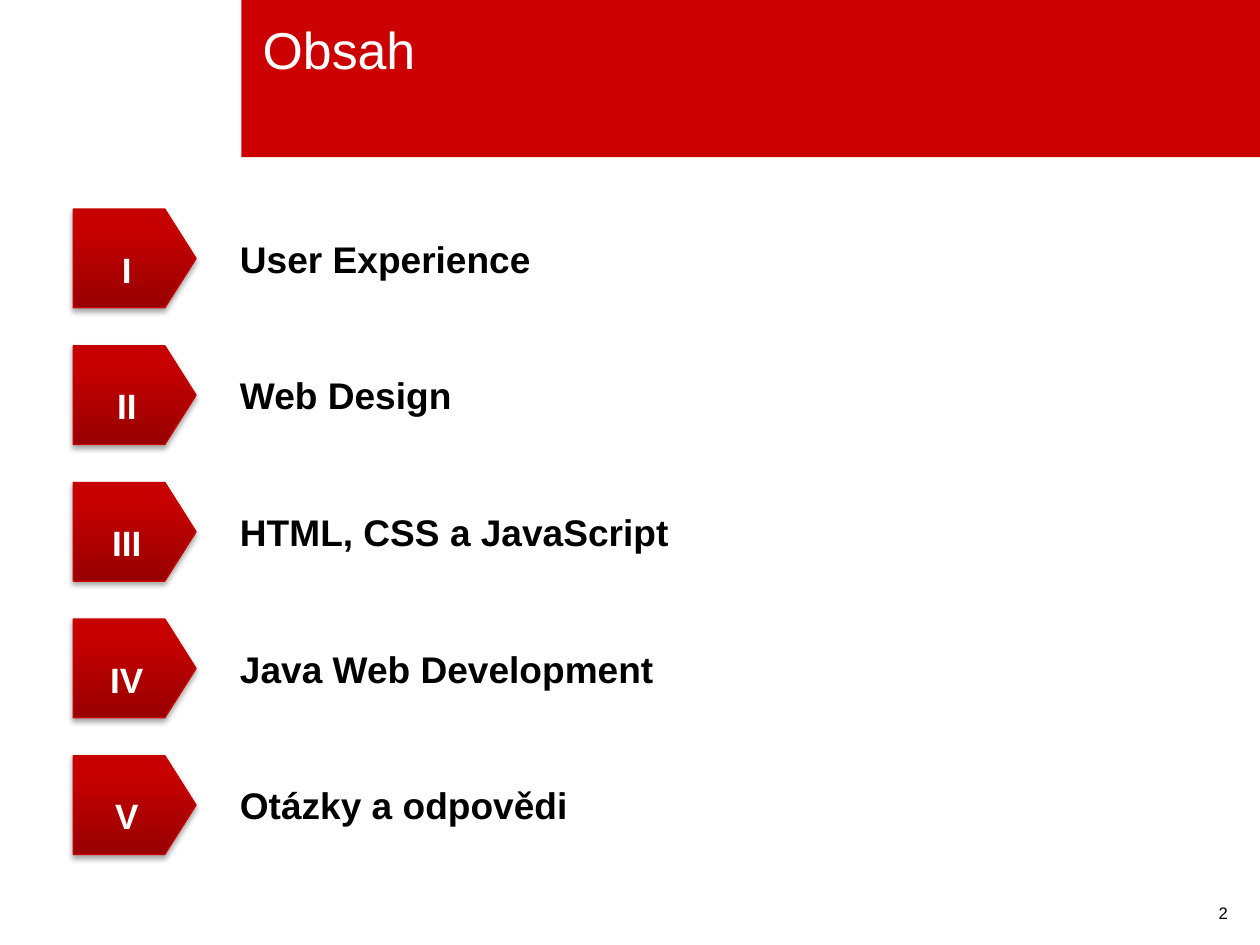
import dataclasses
import typing

import lxml.etree
import pptx
import pptx.dml.color
import pptx.enum.shapes
import pptx.enum.text
import pptx.oxml
import pptx.oxml.ns
import pptx.util

SHAPE = pptx.enum.shapes.MSO_SHAPE
ALIGN = pptx.enum.text.PP_ALIGN
ANCHOR = pptx.enum.text.MSO_ANCHOR
NS = 'xmlns:a="http://schemas.openxmlformats.org/drawingml/2006/main"'
WIDTH, HEIGHT = pptx.util.Inches(9.45), pptx.util.Inches(7.09)
RED, WHITE, BLACK = "CC0000", "FFFFFF", "000000"
STOPS = ((0, "980000"), (80, "C60000"), (100, "C70000"))
FIRST, PITCH, TALL = 22.14, 14.46, 10.44


@dataclasses.dataclass
class Box:
    """A frame in percent of the slide's width and height."""
    left: float
    top: float
    width: float
    height: float

    def frame(self) -> tuple[int, ...]:
        return (round(self.left * WIDTH / 100), round(self.top * HEIGHT / 100),
                round(self.width * WIDTH / 100), round(self.height * HEIGHT / 100))


@dataclasses.dataclass
class Topic:
    number: str
    title: str


TOPICS = (
    Topic("I", "User Experience"),
    Topic("II", "Web Design"),
    Topic("III", "HTML, CSS a JavaScript"),
    Topic("IV", "Java Web Development"),
    Topic("V", "Otázky a odpovědi"),
)


def color(code: str) -> pptx.dml.color.RGBColor:
    return pptx.dml.color.RGBColor.from_string(code)


def apply(target: typing.Any, values: dict[str, typing.Any]) -> None:
    for name, value in values.items():
        setattr(target, name, value)


def write(shape: typing.Any, text: str, size: float, ink: str,
          bold: bool = False, align: ALIGN = ALIGN.LEFT, space: float = 1.0,
          anchor: ANCHOR = ANCHOR.TOP, left: float = 0) -> None:
    frame = shape.text_frame
    frame.text = text
    apply(frame, {
        "word_wrap": True, "vertical_anchor": anchor,
        "auto_size": pptx.enum.text.MSO_AUTO_SIZE.NONE,
        "margin_left": pptx.util.Inches(left),
        "margin_top": 0, "margin_right": 0, "margin_bottom": 0,
    })
    line = frame.paragraphs[0]
    apply(line, {"alignment": align, "line_spacing": space})
    font = line.runs[0].font
    apply(font, {"name": "Arial", "size": pptx.util.Pt(size), "bold": bold})
    font.color.rgb = color(ink)


def draw(shapes: typing.Any, kind: SHAPE, box: Box, fill: str,
         edge: str, width: float) -> typing.Any:
    shape = shapes.add_shape(kind, *box.frame())
    shape.shadow.inherit = False
    shape.fill.solid()
    shape.fill.fore_color.rgb = color(fill)
    shape.line.color.rgb = color(edge)
    shape.line.width = pptx.util.Pt(width)
    return shape


def shade(shape: typing.Any) -> None:
    """Give a shape the upward red gradient and a soft shadow below."""
    shape.fill.gradient()
    shape.fill.gradient_angle = 90
    props = shape.element.spPr
    stops = props.find(".//" + pptx.oxml.ns.qn("a:gsLst"))
    for stop in list(stops):
        stops.remove(stop)
    for place, code in STOPS:
        stops.append(pptx.oxml.parse_xml(
            f'<a:gs {NS} pos="{place * 1000}"><a:srgbClr val="{code}"/></a:gs>'))
    blur, drop = pptx.util.Pt(3.1), pptx.util.Pt(1.8)
    props.find(pptx.oxml.ns.qn("a:effectLst")).append(lxml.etree.fromstring(
        f'<a:outerShdw {NS} blurRad="{blur}" dist="{drop}" dir="5400000" '
        f'rotWithShape="0"><a:srgbClr val="{BLACK}"><a:alpha val="35000"/>'
        '</a:srgbClr></a:outerShdw>'))


def entry(slide: typing.Any, row: int, topic: Topic) -> None:
    top = FIRST + row * PITCH
    shapes = slide.shapes.add_group_shape().shapes
    label = draw(shapes, SHAPE.RECTANGLE, Box(13.65, top, 82.12, TALL),
                 WHITE, WHITE, 2)
    write(label, topic.title, 20, BLACK, True, anchor=ANCHOR.MIDDLE, left=0.51)
    badge = draw(shapes, SHAPE.PENTAGON, Box(5.82, top, 9.74, TALL),
                 RED, "C80000", 0.75)
    badge.adjustments[0] = 0.316
    shade(badge)
    write(badge, topic.number, 19, WHITE, True, ALIGN.CENTER, 1.5, ANCHOR.MIDDLE)


def main() -> None:
    deck = pptx.Presentation()
    apply(deck, {"slide_width": WIDTH, "slide_height": HEIGHT})
    slide = deck.slides.add_slide(deck.slide_layouts[5])

    banner = draw(slide.shapes, SHAPE.RECTANGLE, Box(19.15, 0, 80.85, 16.64),
                  RED, RED, 0)
    banner.line.fill.background()
    title = slide.shapes.title
    banner.element.addnext(title.element)
    names = ("left", "top", "width", "height")
    apply(title, dict(zip(names, Box(20.85, 1.83, 76.72, 13.68).frame())))
    write(title, "Obsah", 28, WHITE)

    page = slide.shapes.add_textbox(*Box(84.13, 95.49, 13.33, 4.37).frame())
    write(page, "2", 9, BLACK, align=ALIGN.RIGHT)

    for row, topic in enumerate(TOPICS):
        entry(slide, row, topic)
    deck.save("out.pptx")


if __name__ == "__main__":
    main()
